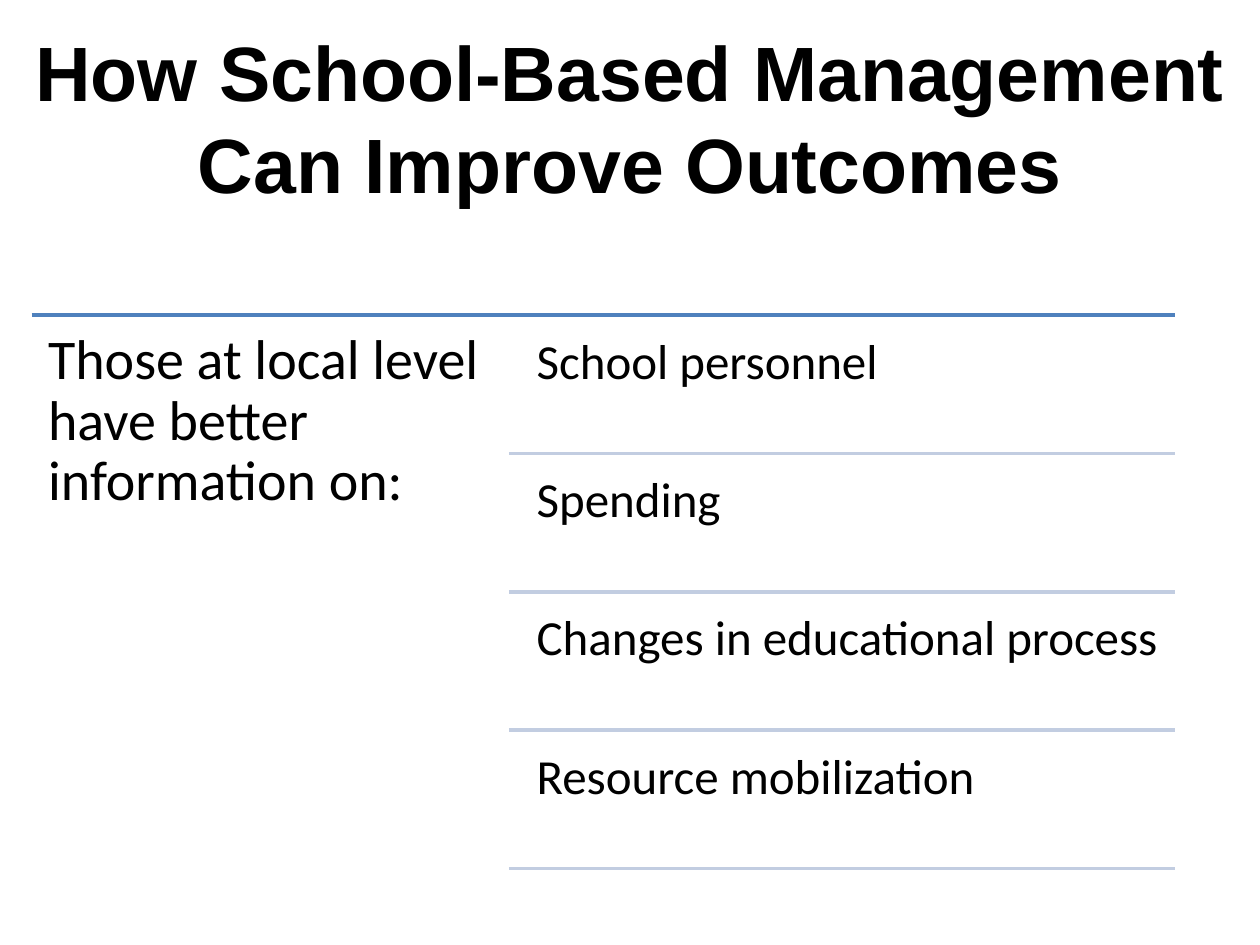
from lxml import etree
from pptx import Presentation
from pptx.dml.color import RGBColor
from pptx.enum.shapes import MSO_CONNECTOR
from pptx.enum.text import MSO_ANCHOR, MSO_AUTO_SIZE, PP_ALIGN
from pptx.oxml.ns import qn
from pptx.util import Cm, Pt

STRAIGHT = MSO_CONNECTOR.STRAIGHT
TOP, MIDDLE = MSO_ANCHOR.TOP, MSO_ANCHOR.MIDDLE
LEFT, CENTER = PP_ALIGN.LEFT, PP_ALIGN.CENTER
NO_FIT = MSO_AUTO_SIZE.NONE

# Content
TITLE = "How School-Based Management Can Improve Outcomes"
LEAD = "Those at local level have better information on:"
TOPICS = [
    "School personnel",
    "Spending",
    "Changes in educational process",
    "Resource mobilization",
]
COLORS = {"text": "000000", "top_rule": "4F81BD", "topic_rule": "C2CDE1"}

# Layout in centimetres
LIST_LEFT, LIST_TOP, LIST_RIGHT = 0.64, 6.35, 23.69
LEAD_W, LEAD_H = 9.63, 11.28
RULE_LEFT, TOPIC_LEFT = 10.26, 10.52
TOPIC_H, TOPIC_GAP = 2.65, 0.14
TOPIC_STEP = TOPIC_H + TOPIC_GAP


def color(name):
    return RGBColor.from_string(COLORS[name])


def write(tf, text, font, size, align, anchor, bold=False):
    tf.word_wrap = True
    tf.auto_size = NO_FIT
    tf.vertical_anchor = anchor
    tf.text = text
    p = tf.paragraphs[0]
    p.alignment = align
    p.font.name, p.font.size, p.font.bold = font, Pt(size), bold
    p.font.color.rgb = color("text")
    return p


def add_text(s, text, x, y, w, h, size, inset):
    tf = s.shapes.add_textbox(Cm(x), Cm(y), Cm(w), Cm(h)).text_frame
    tf.margin_left = tf.margin_right = Cm(inset)
    tf.margin_top = tf.margin_bottom = Cm(inset)
    p = write(tf, text, "Calibri", size, LEFT, TOP)
    p.line_spacing = 0.9


def add_rule(s, x, y, name):
    rule = s.shapes.add_connector(STRAIGHT, Cm(x), Cm(y), Cm(LIST_RIGHT), Cm(y))
    rule.line.color.rgb = color(name)
    rule.line.width = Pt(2)
    etree.SubElement(rule._element.spPr, qn("a:effectLst"))


prs = Presentation()
prs.slide_width, prs.slide_height = Cm(25.4), Cm(19.05)
s = prs.slides.add_slide(prs.slide_layouts[5])

# Title
title = s.shapes.title
title.left, title.top, title.width, title.height = Cm(0.43), Cm(0.76), Cm(24.56), Cm(3.18)
write(title.text_frame, TITLE, "Arial", 44, CENTER, MIDDLE, bold=True)

# Lead statement under the top rule
add_rule(s, LIST_LEFT, LIST_TOP, "top_rule")
add_text(s, LEAD, LIST_LEFT, LIST_TOP, LEAD_W, LEAD_H, 32, 0.33)

# Topics, each closed by a rule
for i, topic in enumerate(TOPICS):
    y = LIST_TOP + TOPIC_GAP + i * TOPIC_STEP
    add_text(s, topic, TOPIC_LEFT, y, LIST_RIGHT - TOPIC_LEFT, TOPIC_H, 28, 0.3)
    add_rule(s, RULE_LEFT, y + TOPIC_H, "topic_rule")

prs.save("out.pptx")
